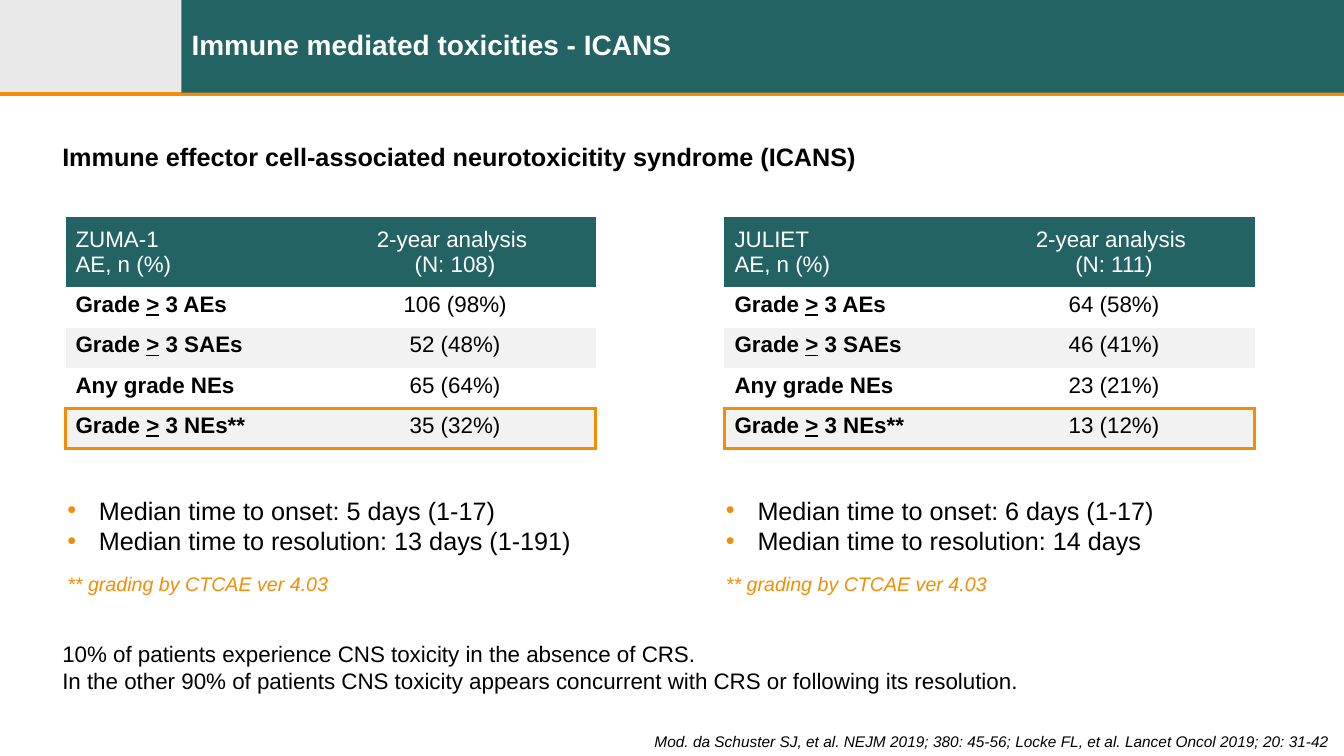
from lxml import etree
from pptx import Presentation
from pptx.dml.color import RGBColor
from pptx.enum.shapes import MSO_CONNECTOR, MSO_SHAPE
from pptx.enum.text import MSO_ANCHOR, MSO_AUTO_SIZE, PP_ALIGN
from pptx.oxml.ns import qn
from pptx.util import Pt

LEFT, CENTER, RIGHT = PP_ALIGN.LEFT, PP_ALIGN.CENTER, PP_ALIGN.RIGHT
TOP, MIDDLE = MSO_ANCHOR.TOP, MSO_ANCHOR.MIDDLE
RECTANGLE = MSO_SHAPE.RECTANGLE
STRAIGHT = MSO_CONNECTOR.STRAIGHT
NO_AUTOFIT = MSO_AUTO_SIZE.NONE

COLORS = {"teal": "236364", "orange": "F38D08", "gray": "E9E9E9",
          "band": "F2F2F2", "black": "000000", "white": "FFFFFF"}
FONT = "Arial"
NO_TABLE_STYLE = "{2D5ABB26-0587-4C30-8999-92F81FD0307C}"
SLIDE_WIDTH, SLIDE_HEIGHT = 960, 540
COLUMN_WIDTHS = (177.8, 200.9)
ROW_HEIGHTS = (50.4, 28.8, 28.8, 28.8, 28.8)
ROW_LABELS = (("Grade ", ">", " 3 AEs"), ("Grade ", ">", " 3 SAEs"),
              ("Any grade NEs",), ("Grade ", ">", " 3 NEs**"))
BORDER_ORDER = ("lnL", "lnR", "lnT", "lnB")

TRIALS = (
    {"left": 46.8, "text_left": 41.04, "name": "ZUMA-1", "patients": "(N: 108)",
     "values": ("106 (98%)", "52 (48%)", "65 (64%)", "35 (32%)"),
     "times": ("Median time to onset: 5 days (1-17)",
               "Median time to resolution: 13 days (1-191)")},
    {"left": 517.5, "text_left": 511.5, "name": "JULIET", "patients": "(N: 111)",
     "values": ("64 (58%)", "46 (41%)", "23 (21%)", "13 (12%)"),
     "times": ("Median time to onset: 6 days (1-17)",
               "Median time to resolution: 14 days")},
)


def rgb(name):
    return RGBColor.from_string(COLORS[name])


def add_run(paragraph, text, size, color="black", bold=False, italic=False, underline=False):
    run = paragraph.add_run()
    run.text = text
    font = run.font
    font.name, font.size = FONT, Pt(size)
    font.bold, font.italic, font.underline = bold, italic, underline
    font.color.rgb = rgb(color)


def write_lines(frame, lines, size, align=LEFT, **style):
    for index, line in enumerate(lines):
        paragraph = frame.add_paragraph() if index else frame.paragraphs[0]
        paragraph.alignment = align
        add_run(paragraph, line, size, **style)


def add_text(slide, box, lines, size, align=LEFT, **style):
    frame = slide.shapes.add_textbox(*map(Pt, box)).text_frame
    frame.word_wrap = True
    write_lines(frame, lines, size, align, **style)
    return frame


def add_block(slide, box, color):
    block = slide.shapes.add_shape(RECTANGLE, *map(Pt, box))
    block.shadow.inherit = False
    block.fill.solid()
    block.fill.fore_color.rgb = rgb(color)
    block.line.fill.background()


def add_header(slide, box, text):
    left, top, width, height = box
    corner = 129.6
    add_block(slide, (left, top, corner, height), "gray")
    rule_y = Pt(top + height + 0.7)
    rule = slide.shapes.add_connector(STRAIGHT, Pt(left), rule_y, Pt(left + width), rule_y)
    rule.line.color.rgb = rgb("orange")
    rule.line.width = Pt(3)
    etree.SubElement(rule.element.spPr, qn("a:effectLst"))
    add_block(slide, (left + corner, top, width - corner, height), "teal")

    title = slide.shapes.title
    title.left, title.top = Pt(left + corner), Pt(top)
    title.width, title.height = Pt(width - corner - 2), Pt(height)
    frame = title.text_frame
    frame.word_wrap = True
    frame.auto_size = NO_AUTOFIT
    frame.vertical_anchor = MIDDLE
    paragraph = frame.paragraphs[0]
    paragraph.alignment = LEFT
    paragraph.line_spacing = 0.9
    add_run(paragraph, text, 20, "white", bold=True)
    title.element.getparent().append(title.element)


def set_fill(cell, color):
    if color:
        cell.fill.solid()
        cell.fill.fore_color.rgb = rgb(color)
    else:
        cell.fill.background()


def set_borders(cell, sides):
    properties = cell._tc.get_or_add_tcPr()
    names = [name for name in BORDER_ORDER if name[-1] in sides]
    for index, name in enumerate(names):
        line = etree.Element(qn("a:" + name), w=str(Pt(2.25)))
        fill = etree.SubElement(line, qn("a:solidFill"))
        etree.SubElement(fill, qn("a:srgbClr"), val=COLORS["orange"])
        properties.insert(index, line)


def add_trial_table(slide, box, trial):
    frame = slide.shapes.add_table(len(ROW_HEIGHTS), len(COLUMN_WIDTHS), *map(Pt, box))
    table = frame.table
    table.first_row = table.horz_banding = False
    next(frame.element.iter(qn("a:tableStyleId"))).text = NO_TABLE_STYLE
    for column, width in zip(table.columns, COLUMN_WIDTHS):
        column.width = Pt(width)
    for row, height in zip(table.rows, ROW_HEIGHTS):
        row.height = Pt(height)

    headings = ((trial["name"], "AE, n (%)"), ("2-year analysis ", trial["patients"]))
    for column, (lines, align) in enumerate(zip(headings, (LEFT, CENTER))):
        cell = table.cell(0, column)
        cell.vertical_anchor = MIDDLE
        set_fill(cell, "teal")
        write_lines(cell.text_frame, lines, 16, align, color="white")

    for row, (label, value) in enumerate(zip(ROW_LABELS, trial["values"]), start=1):
        label_cell, value_cell = table.cell(row, 0), table.cell(row, 1)
        for part in label:
            add_run(label_cell.text_frame.paragraphs[0], part, 16, bold=True,
                    underline=part == ">")
        write_lines(value_cell.text_frame, (value,), 16, CENTER)
        for cell in (label_cell, value_cell):
            cell.vertical_anchor = TOP
            set_fill(cell, None if row % 2 else "band")

    last = len(ROW_LABELS)
    for column, side in enumerate("LR"):
        set_borders(table.cell(last - 1, column), "B")
        set_borders(table.cell(last, column), "TB" + side)


def add_bullet(paragraph):
    properties = paragraph._p.get_or_add_pPr()
    properties.set("marL", str(Pt(22.5)))
    properties.set("indent", str(-Pt(22.5)))
    color = etree.SubElement(properties, qn("a:buClr"))
    etree.SubElement(color, qn("a:srgbClr"), val=COLORS["orange"])
    etree.SubElement(properties, qn("a:buFont"), typeface=FONT)
    etree.SubElement(properties, qn("a:buChar"), char="•")


def add_trial_times(slide, box, times):
    frame = add_text(slide, box, times, 18)
    for paragraph in frame.paragraphs:
        add_bullet(paragraph)
    note = frame.add_paragraph()
    note.space_before = Pt(12)
    add_run(note, "** grading by CTCAE ver 4.03", 14, "orange", italic=True)


def main():
    presentation = Presentation()
    presentation.slide_width, presentation.slide_height = Pt(SLIDE_WIDTH), Pt(SLIDE_HEIGHT)
    slide = presentation.slides.add_slide(presentation.slide_layouts[5])
    add_header(slide, (0, 0, SLIDE_WIDTH, 66.24), "Immune mediated toxicities - ICANS")
    add_text(slide, (37.4, 97.2, 885, 29),
             ("Immune effector cell-associated neurotoxicitity syndrome (ICANS)",), 18, bold=True)
    for trial in TRIALS:
        add_trial_table(slide, (trial["left"], 154.8, sum(COLUMN_WIDTHS), sum(ROW_HEIGHTS)), trial)
        add_trial_times(slide, (trial["text_left"], 350, 388, 80), trial["times"])
    add_text(slide, (37.4, 453.6, 885, 46),
             ("10% of patients experience CNS toxicity in the absence of CRS.",
              "In the other 90% of patients CNS toxicity appears concurrent with CRS "
              "or following its resolution."), 16)
    add_text(slide, (129.6, 519.1, 827.3, 20.5),
             ("Mod. da Schuster SJ, et al. NEJM 2019; 380: 45-56; "
              "Locke FL, et al. Lancet Oncol 2019; 20: 31-42",), 11, RIGHT, italic=True)
    presentation.save("out.pptx")


if __name__ == "__main__":
    main()
